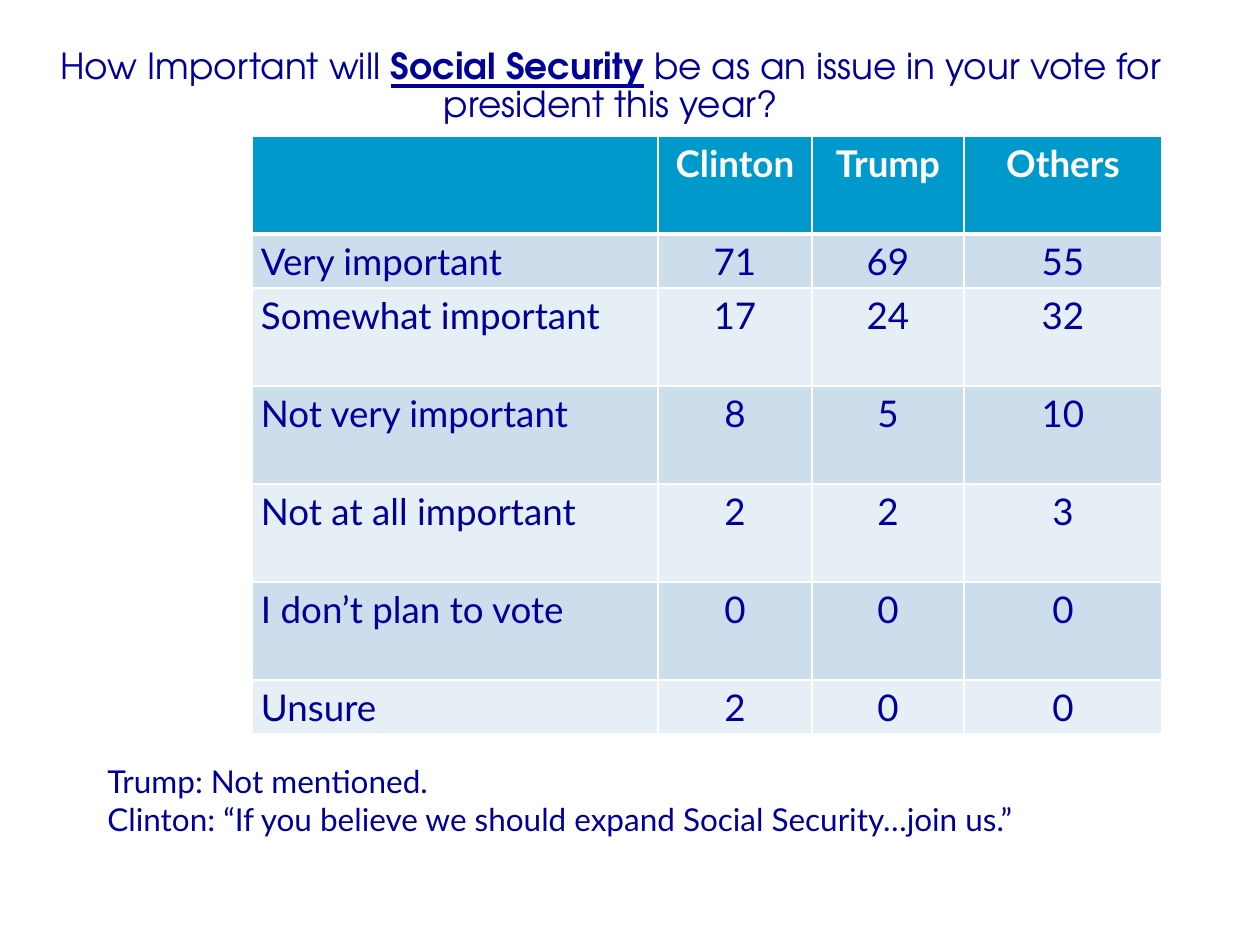
import pptx
import pptx.dml.color
import pptx.enum.text
import pptx.util
from lxml import etree

RGB = pptx.dml.color.RGBColor
NAVY = RGB(0x00, 0x00, 0x99)
WHITE = RGB(0xFF, 0xFF, 0xFF)
TEAL = RGB(0x00, 0x99, 0xCC)
BANDS = (RGB(0xE7, 0xEF, 0xF6), RGB(0xCC, 0xDE, 0xEC))
BODY = "Lato"
HEAD = "TeX Gyre Adventor"
CENTER = pptx.enum.text.PP_ALIGN.CENTER
NS = "http://schemas.openxmlformats.org/drawingml/2006/main"
PAD_X, PAD_Y = 9, 5

COLS = (406, 154, 152, 198)
TALL, SHORT = 98, 53
ROWS = (TALL, SHORT, TALL, TALL, TALL, TALL, SHORT)
POLL = (
    ("", "Clinton", "Trump", "Others"),
    ("Very important", 71, 69, 55),
    ("Somewhat important", 17, 24, 32),
    ("Not very important", 8, 5, 10),
    ("Not at all important", 2, 2, 3),
    ("I don’t plan to vote", 0, 0, 0),
    ("Unsure", 2, 0, 0),
)


def px(n):
    return pptx.util.Emu(round(n * 914400 / 126))


def style(font, name, size, color, bold=False):
    font.name = name
    font.size = pptx.util.Pt(size)
    font.color.rgb = color
    font.bold = bold


def pad(item):
    item.margin_left = item.margin_right = px(PAD_X)
    item.margin_top = item.margin_bottom = px(PAD_Y)


def add_box(slide, box):
    frame = slide.shapes.add_textbox(*map(px, box)).text_frame
    frame.word_wrap = True
    return frame


def add_title(slide, box):
    frame = add_box(slide, box)
    pad(frame)
    frame.vertical_anchor = pptx.enum.text.MSO_ANCHOR.MIDDLE
    para = frame.paragraphs[0]
    para.alignment = CENTER
    para.line_spacing = 0.9
    parts = (
        ("How Important will ", False),
        ("Social Security", True),
        (" be as an issue in your vote for president this year?", False),
    )
    for text, strong in parts:
        run = para.add_run()
        run.text = text
        style(run.font, HEAD, 20.5, NAVY, strong)
        run.font.underline = strong


def add_edges(cell, top, bottom):
    """Draw white cell borders; top and bottom are widths in points."""
    props = cell._tc.get_or_add_tcPr()
    for side, width in (("L", 1), ("R", 1), ("T", top), ("B", bottom)):
        line = etree.SubElement(props, f"{{{NS}}}ln{side}", w=str(pptx.util.Pt(width)))
        fill = etree.SubElement(line, f"{{{NS}}}solidFill")
        etree.SubElement(fill, f"{{{NS}}}srgbClr", val=str(WHITE))


def fill_cell(cell, value, row, col):
    head = row == 0
    pad(cell)
    add_edges(cell, 3 if row == 1 else 1, 3 if head else 1)
    cell.fill.solid()
    cell.fill.fore_color.rgb = TEAL if head else BANDS[row % 2]
    cell.text = str(value)
    para = cell.text_frame.paragraphs[0]
    if col:
        para.alignment = CENTER
    for run in para.runs:
        style(run.font, BODY, 21, WHITE if head else NAVY, head)


def add_poll(slide, left, top):
    box = (left, top, sum(COLS), sum(ROWS))
    table = slide.shapes.add_table(len(ROWS), len(COLS), *map(px, box)).table
    for col, width in zip(table.columns, COLS):
        col.width = px(width)
    for row, height in zip(table.rows, ROWS):
        row.height = px(height)
    for r, line in enumerate(POLL):
        for c, value in enumerate(line):
            fill_cell(table.cell(r, c), value, r, c)


def add_quotes(slide, box):
    frame = add_box(slide, box)
    frame.auto_size = pptx.enum.text.MSO_AUTO_SIZE.SHAPE_TO_FIT_TEXT
    frame.text = (
        "Trump: Not mentioned.\n"
        "Clinton: “If you believe we should expand Social Security…join us.”"
    )
    for para in frame.paragraphs:
        for run in para.runs:
            style(run.font, BODY, 18, NAVY)


def main():
    deck = pptx.Presentation()
    deck.slide_width, deck.slide_height = px(1260), px(945)
    slide = deck.slides.add_slide(deck.slide_layouts[6])
    add_poll(slide, 252, 136)
    add_title(slide, (0, 38, 1222, 98))
    add_quotes(slide, (95, 756, 1071, 89))
    deck.save("out.pptx")


if __name__ == "__main__":
    main()
